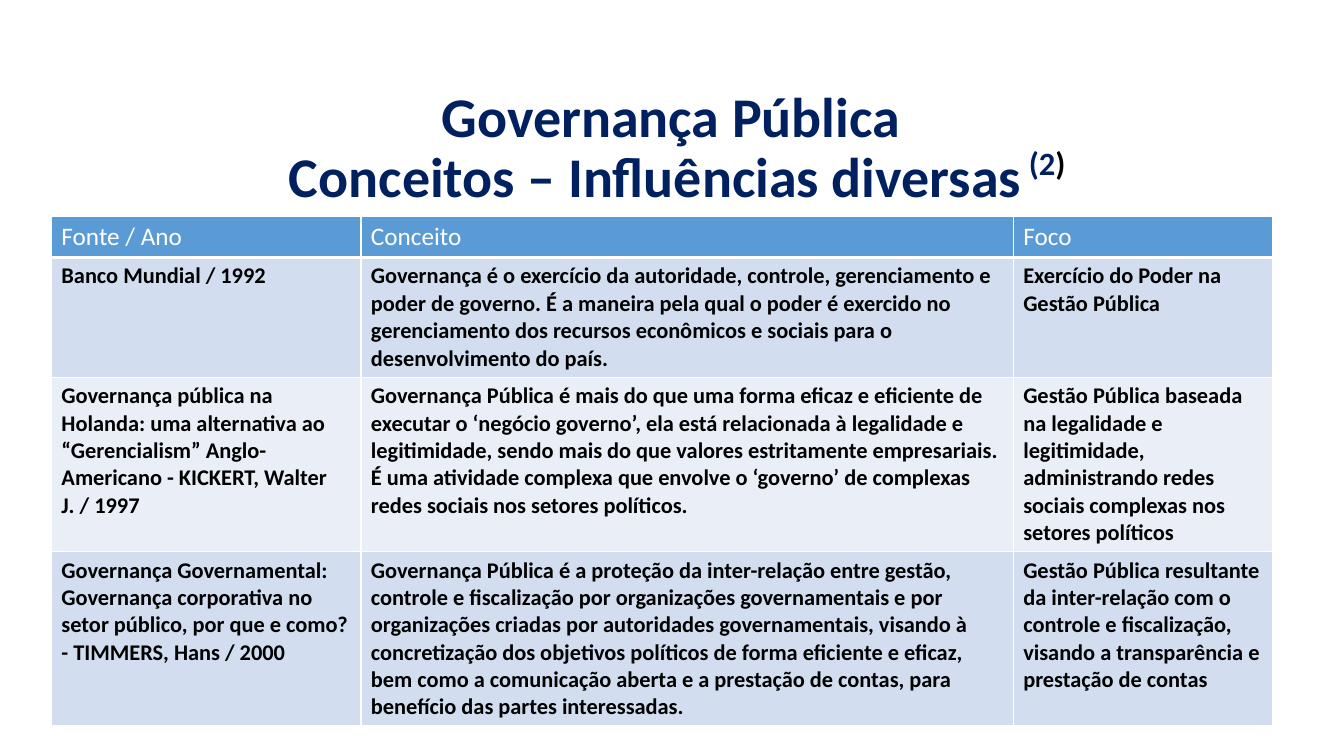
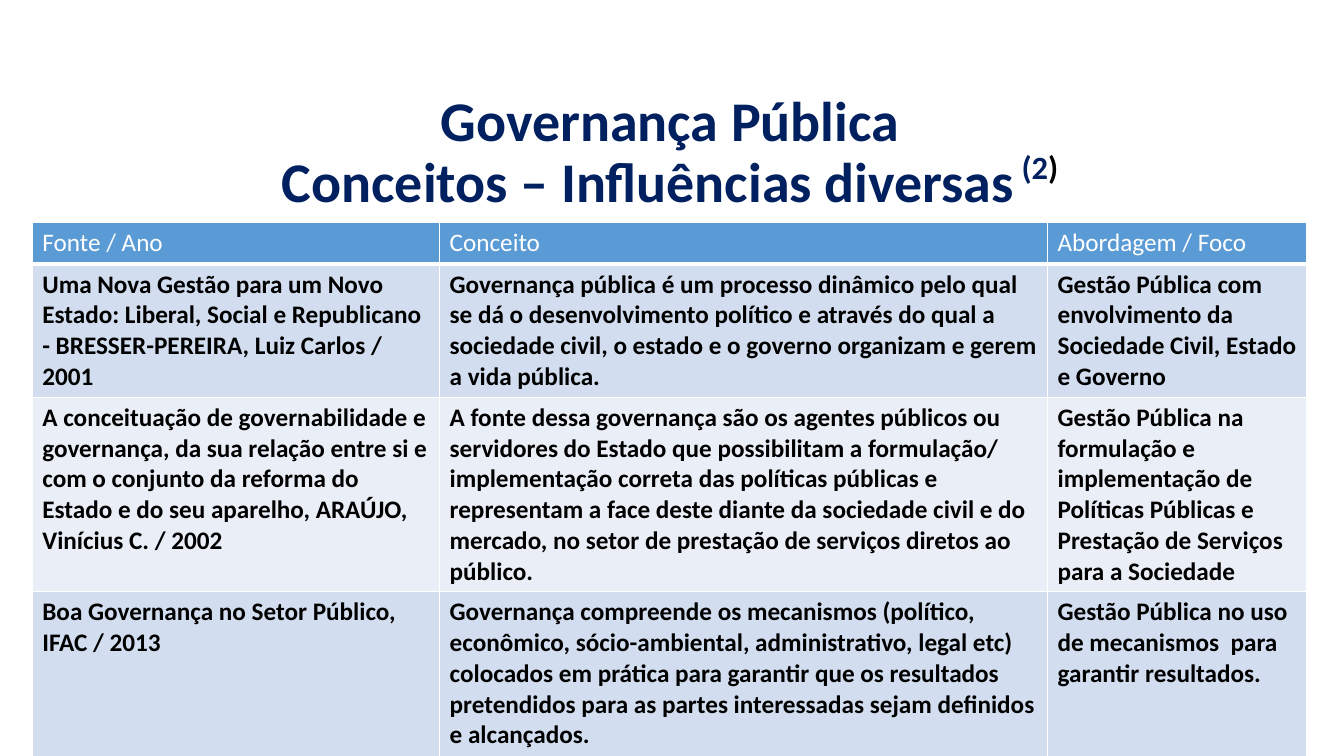
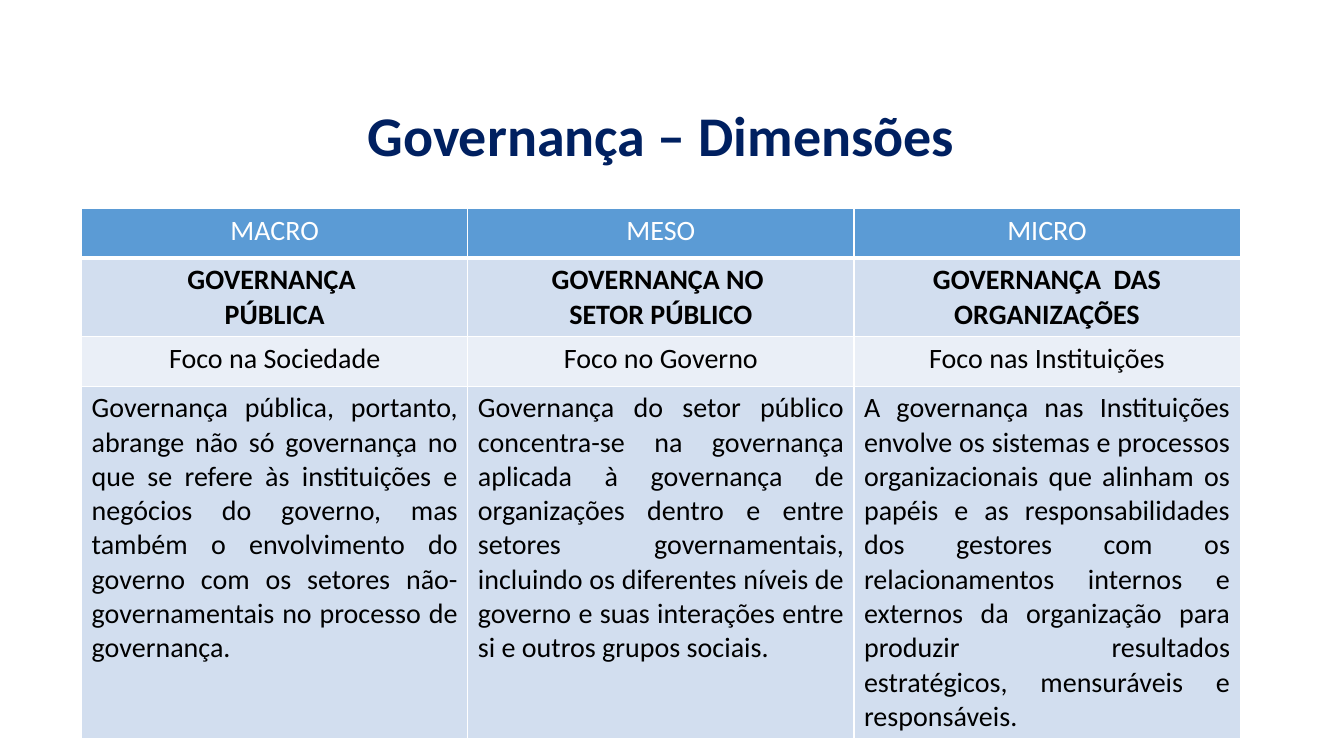
from lxml import etree
from pptx import Presentation
from pptx.dml.color import RGBColor
from pptx.enum.text import MSO_ANCHOR, MSO_AUTO_SIZE, PP_ALIGN
from pptx.oxml.ns import qn
from pptx.util import Inches, Pt

LEFT, CENTER, JUSTIFY = PP_ALIGN.LEFT, PP_ALIGN.CENTER, PP_ALIGN.JUSTIFY
MIDDLE = MSO_ANCHOR.MIDDLE
NO_AUTOFIT = MSO_AUTO_SIZE.NONE

COLORS = {
    "title": "002060",
    "header": "5B9BD5",
    "band_dark": "D2DEEF",
    "band_light": "EAEFF7",
    "white": "FFFFFF",
    "black": "000000",
}
FONT = "Calibri"
TITLE_SIZE = 40
TITLE_FRAME = {"word_wrap": True, "auto_size": NO_AUTOFIT, "vertical_anchor": MIDDLE}
TITLE_PARAGRAPH = {"alignment": CENTER, "line_spacing": 0.9}
SUPERSCRIPT = "40000"

CONCEPTS_1992_2000 = [
    ["Fonte / Ano", "Conceito", "Foco"],
    [
        "Banco Mundial / 1992",
        "Governança é o exercício da autoridade, controle, gerenciamento e poder de governo. É a maneira pela qual o poder é exercido no gerenciamento dos recursos econômicos e sociais para o desenvolvimento do país.",
        "Exercício do Poder na Gestão Pública",
    ],
    [
        "Governança pública na Holanda: uma alternativa ao “Gerencialism” Anglo-Americano - KICKERT, Walter J. / 1997",
        "Governança Pública é mais do que uma forma eficaz e eficiente de executar o ‘negócio governo’, ela está relacionada à legalidade e legitimidade, sendo mais do que valores estritamente empresariais. É uma atividade complexa que envolve o ‘governo’ de complexas redes sociais nos setores políticos.",
        "Gestão Pública baseada na legalidade e legitimidade, administrando redes sociais complexas nos setores políticos",
    ],
    [
        "Governança Governamental: Governança corporativa no setor público, por que e como? - TIMMERS, Hans / 2000",
        "Governança Pública é a proteção da inter-relação entre gestão, controle e fiscalização por organizações governamentais e por organizações criadas por autoridades governamentais, visando à concretização dos objetivos políticos de forma eficiente e eficaz, bem como a comunicação aberta e a prestação de contas, para benefício das partes interessadas.",
        "Gestão Pública resultante da inter-relação com o controle e fiscalização, visando a transparência e prestação de contas",
    ],
]

CONCEPTS_2001_2013 = [
    ["Fonte / Ano", "Conceito", "Abordagem / Foco"],
    [
        "Uma Nova Gestão para um Novo Estado: Liberal, Social e Republicano - BRESSER-PEREIRA, Luiz Carlos / 2001",
        "Governança pública é um processo dinâmico pelo qual se dá o desenvolvimento político e através do qual a sociedade civil, o estado e o governo organizam e gerem a vida pública.",
        "Gestão Pública com envolvimento da Sociedade Civil, Estado e Governo",
    ],
    [
        "A conceituação de governabilidade e governança, da sua relação entre si e com o conjunto da reforma do Estado e do seu aparelho, ARAÚJO, Vinícius C. / 2002",
        "A fonte dessa governança são os agentes públicos ou servidores do Estado que possibilitam a formulação/ implementação correta das políticas públicas e representam a face deste diante da sociedade civil e do mercado, no setor de prestação de serviços diretos ao público.",
        "Gestão Pública na formulação e implementação de Políticas Públicas e Prestação de Serviços para a Sociedade",
    ],
    [
        "Boa Governança no Setor Público, IFAC / 2013",
        "Governança compreende os mecanismos (político, econômico, sócio-ambiental, administrativo, legal etc) colocados em prática para garantir que os resultados pretendidos para as partes interessadas sejam definidos e alcançados.",
        "Gestão Pública no uso de mecanismos  para garantir resultados.",
    ],
]

DIMENSIONS = [
    ["MACRO", "MESO", "MICRO"],
    ["GOVERNANÇA \nPÚBLICA", "GOVERNANÇA NO \nSETOR PÚBLICO", "GOVERNANÇA  DAS ORGANIZAÇÕES"],
    ["Foco na Sociedade", "Foco no Governo", "Foco nas Instituições"],
    [
        "Governança pública, portanto, abrange não só governança no que se refere às instituições e negócios do governo, mas também o envolvimento do governo com os setores não-governamentais no processo de governança.",
        "Governança do setor público concentra-se na governança aplicada à governança de organizações dentro e entre setores governamentais, incluindo os diferentes níveis de governo e suas interações entre si e outros grupos sociais.",
        "A governança nas Instituições envolve os sistemas e processos organizacionais que alinham os papéis e as responsabilidades dos gestores com os relacionamentos internos e externos da organização para produzir resultados estratégicos, mensuráveis e responsáveis.",
    ],
]

CONCEPT_ROWS = [(LEFT, False)] + [(LEFT, True)] * 3
DIMENSION_ROWS = [(CENTER, False), (CENTER, True), (CENTER, False), (JUSTIFY, False)]


def rgb(color):
    return RGBColor.from_string(COLORS[color])


def apply(target, values):
    for name, value in values.items():
        setattr(target, name, value)


def style_run(run, size, color, bold):
    apply(run.font, {"name": FONT, "size": Pt(size), "bold": bold})
    run.font.color.rgb = rgb(color)


def set_master_title_size(prs):
    steps = [qn(tag) for tag in ("p:titleStyle", "a:lvl1pPr", "a:defRPr")]
    prs.slide_master.element.find(".//" + "/".join(steps)).set("sz", str(TITLE_SIZE * 100))


def add_title(slide, box, text, note=()):
    title = slide.shapes.title
    apply(title, dict(zip(("left", "top", "width", "height"), map(Inches, box))))
    apply(title.text_frame, TITLE_FRAME)
    paragraph = title.text_frame.paragraphs[0]
    paragraph.text = text
    apply(paragraph, TITLE_PARAGRAPH)
    for run in paragraph.runs:
        style_run(run, TITLE_SIZE, "title", True)
    for note_text, color in note:
        run = paragraph.add_run()
        run.text = note_text
        style_run(run, TITLE_SIZE, color, True)
        run.font._element.set("baseline", SUPERSCRIPT)


def add_borders(cell, bottom):
    properties = cell._tc.get_or_add_tcPr()
    for side, width in (("L", 1), ("R", 1), ("T", 1), ("B", bottom)):
        line = etree.SubElement(properties, qn(f"a:ln{side}"), w=str(Pt(width)))
        fill = etree.SubElement(line, qn("a:solidFill"))
        etree.SubElement(fill, qn("a:srgbClr"), val=COLORS["white"])


def fill_cell(cell, text, row_index, size, alignment, bold):
    is_header = row_index == 0
    add_borders(cell, 3 if is_header else 1)
    band = "band_dark" if row_index % 2 else "band_light"
    cell.fill.solid()
    cell.fill.fore_color.rgb = rgb("header" if is_header else band)
    cell.text = text
    for paragraph in cell.text_frame.paragraphs:
        paragraph.alignment = alignment
        for run in paragraph.runs:
            style_run(run, size, "white" if is_header else "black", bold)


def add_grid(slide, origin, widths, heights, rows, row_styles, header_size, body_size):
    size = (sum(widths), sum(heights))
    table = slide.shapes.add_table(
        len(rows), len(widths), *map(Inches, origin + size)
    ).table
    for column, width in zip(table.columns, widths):
        column.width = Inches(width)
    for row, height in zip(table.rows, heights):
        row.height = Inches(height)
    for row_index, (texts, row_style) in enumerate(zip(rows, row_styles)):
        text_size = body_size if row_index else header_size
        for column_index, text in enumerate(texts):
            cell = table.cell(row_index, column_index)
            fill_cell(cell, text, row_index, text_size, *row_style)


def main():
    prs = Presentation()
    prs.slide_width, prs.slide_height = Inches(13.33), Inches(7.5)
    set_master_title_size(prs)
    title_only = prs.slide_layouts[5]
    note = [(" (2", "title"), (")", "black")]

    slide = prs.slides.add_slide(title_only)
    add_title(slide, (0.7, -0.19, 11.91, 3.34),
              "Governança Pública\v Conceitos – Influências diversas", note)
    add_grid(slide, (0.51, 2.15), (3.07, 6.47, 2.57), (0.4, 1.18, 1.72, 1.72),
             CONCEPTS_1992_2000, CONCEPT_ROWS, 18, 16)

    slide = prs.slides.add_slide(title_only)
    add_title(slide, (0.69, -0.39, 11.91, 3.83),
              "Governança Pública\vConceitos – Influências diversas", note)
    add_grid(slide, (0.32, 2.21), (4.04, 6.03, 2.57), (0.41, 1.32, 1.93, 1.63),
             CONCEPTS_2001_2013, CONCEPT_ROWS, 18, 18)

    slide = prs.slides.add_slide(title_only)
    add_title(slide, (0.6, -0.54, 11.91, 3.83), "Governança – Dimensões")
    add_grid(slide, (0.81, 2.07), (3.83,) * 3, (0.49, 0.78, 0.49, 3.42),
             DIMENSIONS, DIMENSION_ROWS, 20, 20)

    prs.save("out.pptx")


if __name__ == "__main__":
    main()
